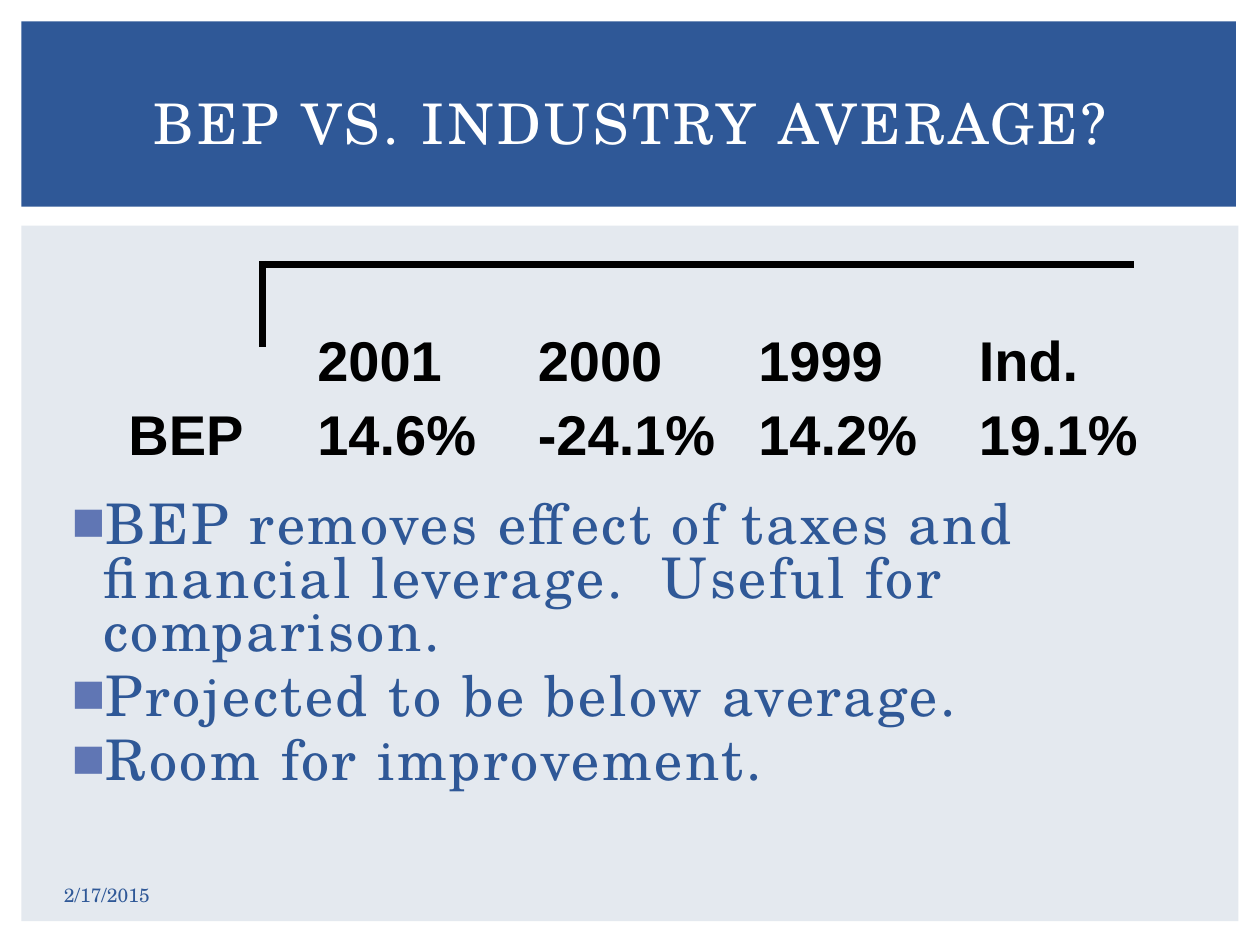
from collections import namedtuple

from lxml.etree import SubElement
from pptx import Presentation
from pptx.dml.color import RGBColor
from pptx.enum.shapes import MSO_CONNECTOR, MSO_SHAPE
from pptx.enum.text import MSO_ANCHOR, PP_ALIGN
from pptx.oxml.ns import qn
from pptx.util import Inches, Pt

NAVY = RGBColor(0x2F, 0x58, 0x97)
PALE = RGBColor(0xE4, 0xE9, 0xEF)
BULLET = RGBColor(0x60, 0x76, 0xB4)
WHITE = RGBColor(255, 255, 255)
BLACK = RGBColor(0, 0, 0)
SERIF, SANS = "TeX Gyre Schola", "Arial"

# The slide is a grid of 100 columns by 75 rows
COLS, ROWS = 100, 75
UNIT = Inches(0.1)
Box = namedtuple("Box", "x y w h")


def grid(*values):
    return [int(v * UNIT) for v in values]


def inside(box, x, y, w, h):
    """Box placed relative to the corner of another box."""
    return Box(box.x + x, box.y + y, w, h)


def add_panel(s, box, color):
    sp = s.shapes.add_shape(MSO_SHAPE.RECTANGLE, *grid(*box))
    sp.shadow.inherit = False
    sp.fill.solid()
    sp.fill.fore_color.rgb = color
    sp.line.fill.background()


def add_text(s, box, lines, size, color, font=SERIF, bold=False, spacing=0,
             anchor=MSO_ANCHOR.TOP):
    tf = s.shapes.add_textbox(*grid(*box)).text_frame
    tf.word_wrap = True
    tf.vertical_anchor = anchor
    tf.text = "\n".join(lines)
    for p in tf.paragraphs:
        for r in p.runs:
            r.font.name, r.font.size, r.font.bold = font, Pt(size), bold
            r.font.color.rgb = color
            if spacing:
                r._r.get_or_add_rPr().set("spc", str(int(spacing * 100)))
    return tf


def add_rule(s, x1, y1, x2, y2):
    line = s.shapes.add_connector(MSO_CONNECTOR.STRAIGHT, *grid(x1, y1, x2, y2))
    line.line.color.rgb = BLACK
    line.line.width = Pt(4)
    SubElement(line._element.spPr, qn("a:effectLst"))


def add_title(s, box, title):
    add_panel(s, box, NAVY)
    tf = add_text(s, inside(box, 2.5, 2.2, 91.7, 11.5), [title], 32, WHITE,
                  spacing=2, anchor=MSO_ANCHOR.MIDDLE)
    tf.paragraphs[0].alignment = PP_ALIGN.CENTER


def add_ratios(s, box, rows):
    """Tabbed figures under a corner made of two rules."""
    left, right = box.x + 11.6, box.x + 80.8
    add_rule(s, left + 0.2, box.y + 0.3, right, box.y + 0.3)
    add_rule(s, left, box.y, left, box.y + 6.8)
    lines = ["\t".join(row) for row in rows]
    tf = add_text(s, inside(box, 0, 4.1, box.w, 12.7), lines, 32, BLACK,
                  font=SANS, bold=True)
    for p in tf.paragraphs:
        p.line_spacing = 1.1
        tabs = SubElement(p._p.get_or_add_pPr(), qn("a:tabLst"))
        for i in range(len(rows[0]) - 1):
            SubElement(tabs, qn("a:tab"), pos=str(Inches(1.5 + 1.75 * i)), algn="l")


def add_bullets(s, box, points):
    tf = add_text(s, box, points, 32, NAVY, spacing=1.5)
    for i, p in enumerate(tf.paragraphs):
        p.line_spacing = 0.8
        p.space_before = Pt(6 if i else 0)
        pPr = p._p.get_or_add_pPr()
        pPr.set("marL", str(Inches(0.3)))
        pPr.set("indent", str(Inches(-0.25)))
        color = SubElement(pPr, qn("a:buClr"))
        SubElement(color, qn("a:srgbClr"), val=str(BULLET))
        SubElement(pPr, qn("a:buFont"), typeface=SANS)
        SubElement(pPr, qn("a:buChar"), char="■")


def add_body(s, box, rows, points, date):
    add_panel(s, box, PALE)
    add_ratios(s, inside(box, 7.5, 2.8, 82.1, 16.8), rows)
    add_bullets(s, inside(box, 2.5, 21.4, 91.9, 27.7), points)
    # Date in the foot of the panel
    add_text(s, inside(box, 2.4, 51.6, 23.3, 3), [date], 11, NAVY,
             anchor=MSO_ANCHOR.MIDDLE)


def main():
    prs = Presentation()
    prs.slide_width, prs.slide_height = grid(COLS, ROWS)
    s = prs.slides.add_slide(prs.slide_layouts[6])
    add_title(s, Box(1.7, 1.7, 96.4, 14.7), "BEP VS. INDUSTRY AVERAGE?")
    add_body(
        s, Box(1.7, 17.9, 96.6, 55.2),
        [["", "2001", "2000", "1999", "Ind."],
         ["BEP", "14.6%", "-24.1%", "14.2%", "19.1%"]],
        ["BEP removes effect of taxes and financial leverage.  Useful for comparison.",
         "Projected to be below average.",
         "Room for improvement."],
        "2/17/2015")
    prs.save("out.pptx")


if __name__ == "__main__":
    main()
